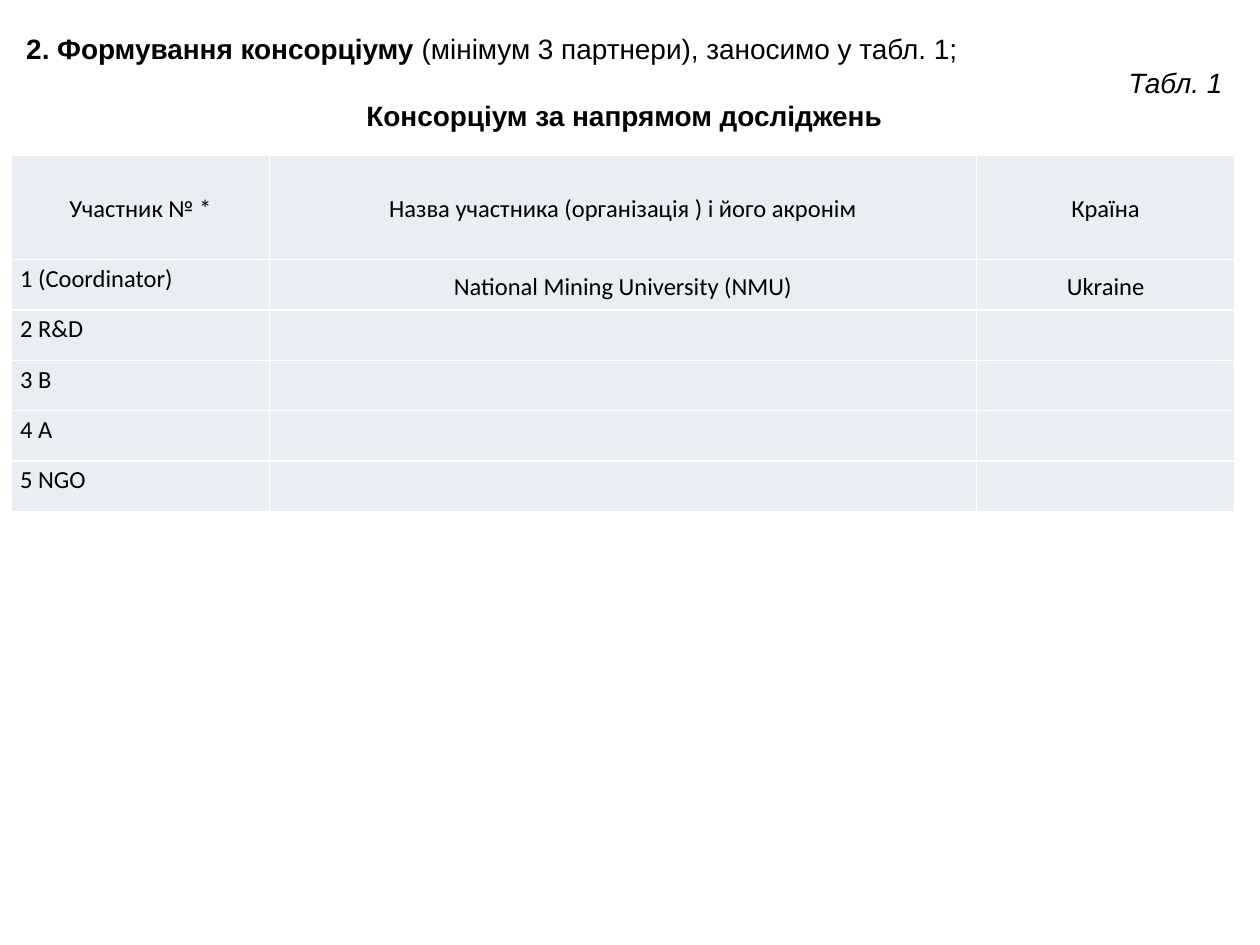
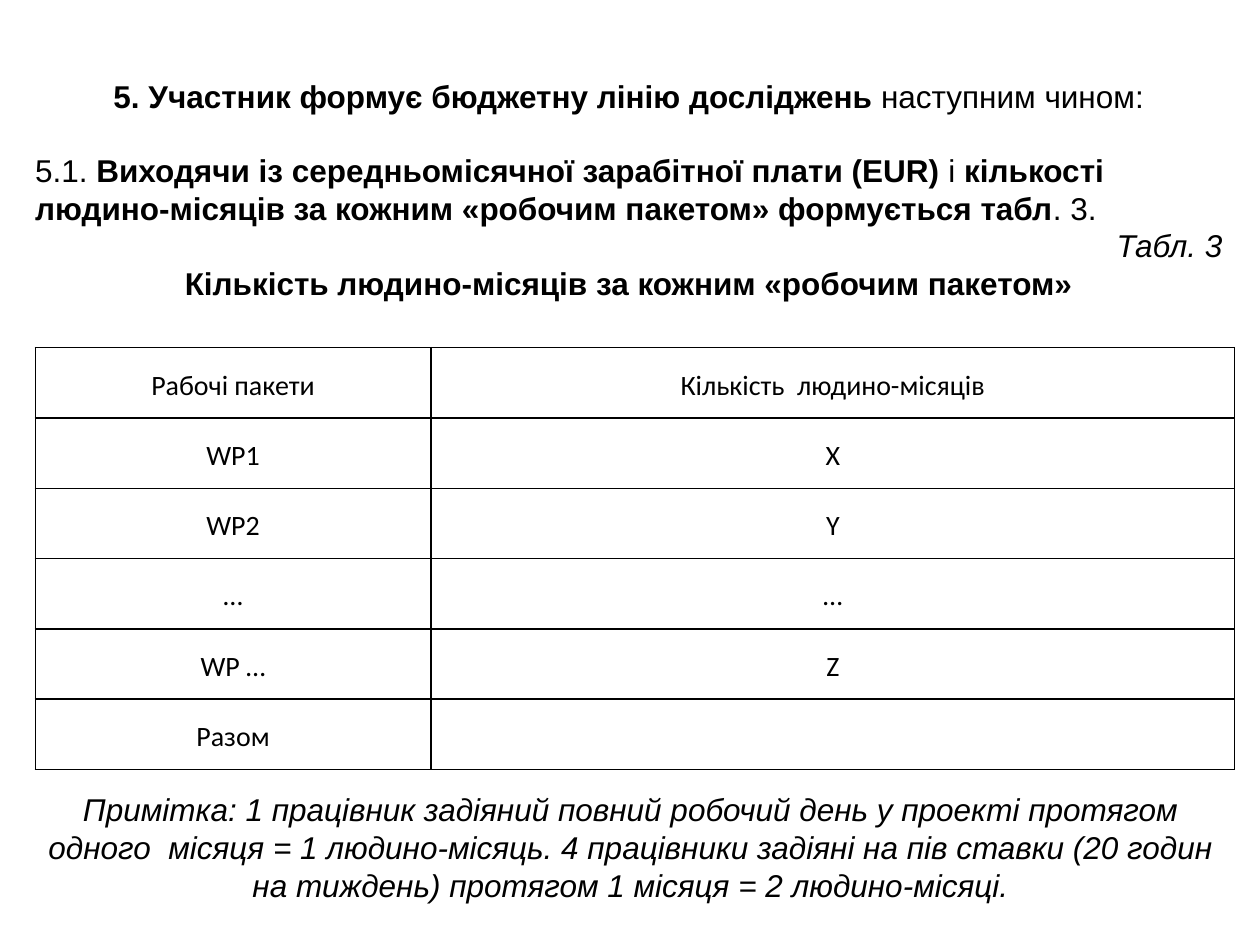
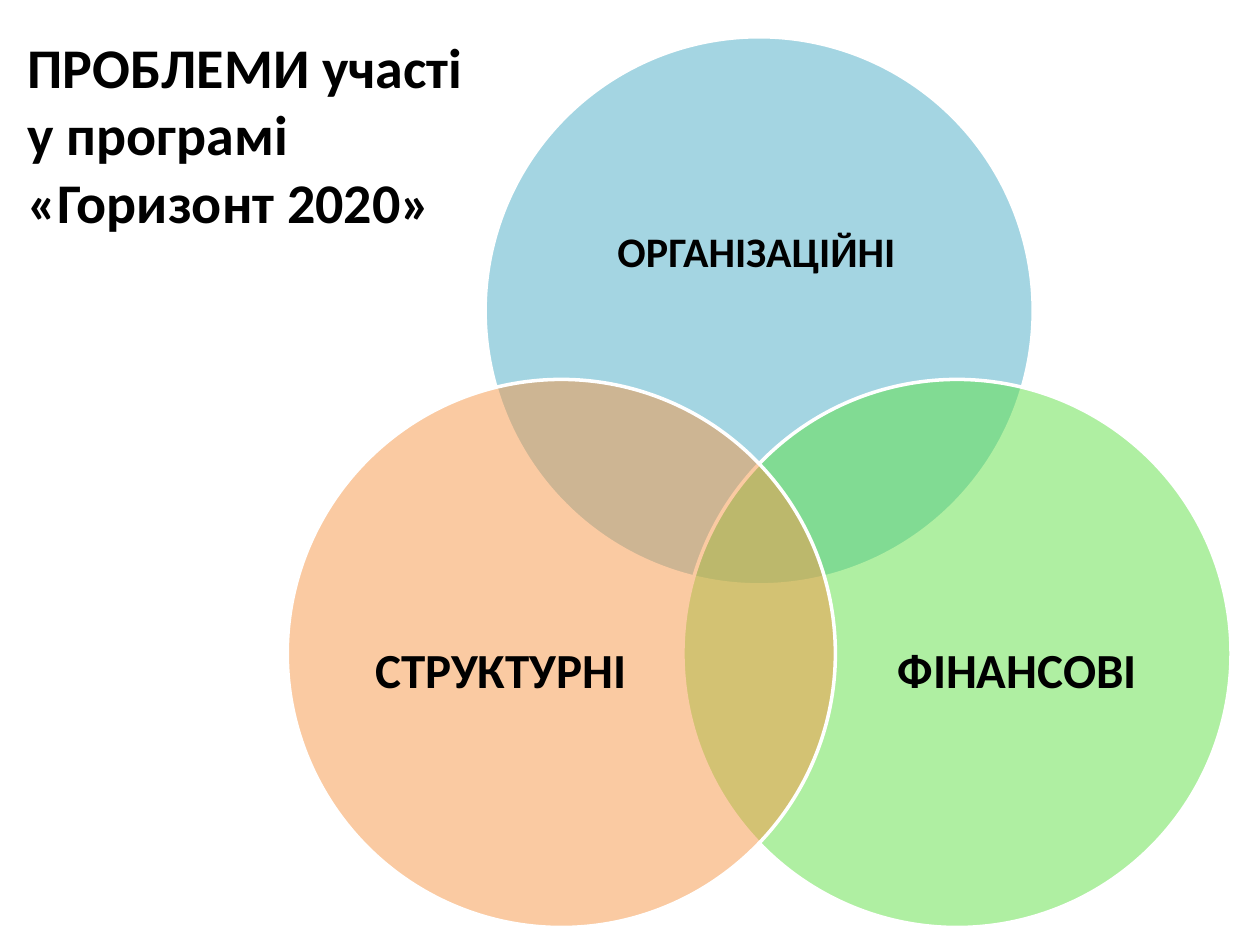
from dataclasses import dataclass
from math import cos, radians, sin, sqrt
from typing import NamedTuple

from lxml import etree
from pptx import Presentation
from pptx.dml.color import RGBColor
from pptx.enum.shapes import MSO_SHAPE
from pptx.enum.text import MSO_ANCHOR, PP_ALIGN
from pptx.oxml.ns import qn
from pptx.util import Inches, Length, Pt

LEFT, CENTER, RIGHT = PP_ALIGN.LEFT, PP_ALIGN.CENTER, PP_ALIGN.RIGHT
JUSTIFY = PP_ALIGN.JUSTIFY
TOP, MIDDLE = MSO_ANCHOR.TOP, MSO_ANCHOR.MIDDLE
ELLIPSE = MSO_SHAPE.OVAL

# The page is a grid of 100 columns by 75 rows of equal square modules.
COLUMNS, ROWS, MODULE = 100, 75, 0.1
BLACK, WHITE, PALE = "000000", "FFFFFF", "E9EDF4"
HEADING_FONT, BODY_FONT = "Arial", "Calibri"


class Area(NamedTuple):
    left: float
    top: float
    width: float
    height: float


class Span(NamedTuple):
    text: str
    bold: bool = False
    italic: bool = False


@dataclass(frozen=True)
class Para:
    spans: tuple[Span, ...]
    align: PP_ALIGN = LEFT
    before: float = 0
    line_spacing: float = 1


@dataclass(frozen=True)
class TextStyle:
    font: str
    size: float
    anchor: MSO_ANCHOR = TOP
    inset_x: float = 1
    inset_y: float = 0.5


@dataclass(frozen=True)
class TableStyle:
    size: float
    border: str
    fill: str | None = None


@dataclass(frozen=True)
class Circle:
    label: str
    size: float
    color: str
    angle: float
    label_share: Area  # shares of the diameter, from the circle's corner


def modules(count: float) -> Length:
    return Inches(round(count * MODULE, 3))


def color(value: str) -> RGBColor:
    return RGBColor.from_string(value)


def bounds(area: Area) -> list[Length]:
    return [modules(length) for length in area]


def set_all(target, values: dict) -> None:
    for name, value in values.items():
        setattr(target, name, value)


def write_para(para, content: Para, font: str, size: float) -> None:
    set_all(para, {"alignment": content.align, "space_before": Pt(content.before),
                   "line_spacing": content.line_spacing})
    for span in content.spans:
        run = para.add_run()
        run.text = span.text
        set_all(run.font, {"name": font, "size": Pt(size),
                           "bold": span.bold, "italic": span.italic})
        run.font.color.rgb = color(BLACK)


def add_text(page, area: Area, paras: list[Para], style: TextStyle) -> None:
    frame = page.shapes.add_textbox(*bounds(area)).text_frame
    set_all(frame, {
        "word_wrap": True, "vertical_anchor": style.anchor,
        "margin_left": modules(style.inset_x), "margin_right": modules(style.inset_x),
        "margin_top": modules(style.inset_y), "margin_bottom": modules(style.inset_y)})
    for index, content in enumerate(paras):
        para = frame.add_paragraph() if index else frame.paragraphs[0]
        write_para(para, content, style.font, style.size)


def add_borders(cell, line_color: str) -> None:
    properties = cell._tc.get_or_add_tcPr()
    for side in ("a:lnL", "a:lnR", "a:lnT", "a:lnB"):
        line = etree.SubElement(properties, qn(side), w=str(Pt(1)))
        fill = etree.SubElement(line, qn("a:solidFill"))
        etree.SubElement(fill, qn("a:srgbClr"), val=line_color)


def add_grid_table(page, area: Area, widths: list[float], heights: list[float],
                   rows: list[list[str]], style: TableStyle,
                   list_column: int | None = None) -> None:
    """Centre every cell except the body of list_column, which starts at the top."""
    table = page.shapes.add_table(len(rows), len(widths), *bounds(area)).table
    set_all(table, {"first_row": False, "horz_banding": False})
    for column, width in zip(table.columns, widths):
        column.width = modules(width)
    for row, height in zip(table.rows, heights):
        row.height = modules(height)
    for row_index, texts in enumerate(rows):
        for column_index, text in enumerate(texts):
            cell = table.cell(row_index, column_index)
            listed = row_index > 0 and column_index == list_column
            set_all(cell, {"margin_left": modules(0.7), "margin_right": modules(0.7),
                           "margin_top": 0, "margin_bottom": 0,
                           "vertical_anchor": TOP if listed else MIDDLE})
            add_borders(cell, style.border)
            if style.fill:
                cell.fill.solid()
                cell.fill.fore_color.rgb = color(style.fill)
            else:
                cell.fill.background()
            if text:
                content = Para((Span(text),), JUSTIFY if listed else CENTER,
                               line_spacing=1.15)
                write_para(cell.text_frame.paragraphs[0], content, BODY_FONT, style.size)


def add_circle(page, circle: Circle, center: tuple[float, float],
               orbit: float, diameter: float) -> None:
    angle = radians(circle.angle)
    left = center[0] + orbit * cos(angle) - diameter / 2
    top = center[1] + orbit * sin(angle) - diameter / 2
    shape = page.shapes.add_shape(ELLIPSE, *bounds(Area(left, top, diameter, diameter)))
    shape.shadow.inherit = False
    shape.fill.solid()
    shape.fill.fore_color.rgb = color(circle.color)
    fill_color = shape._element.spPr.find(qn("a:solidFill")).find(qn("a:srgbClr"))
    etree.SubElement(fill_color, qn("a:alpha"), val="50000")
    shape.line.color.rgb = color(WHITE)
    shape.line.width = Pt(2)

    share = circle.label_share
    label_area = Area(left + share.left * diameter, top + share.top * diameter,
                      share.width * diameter, share.height * diameter)
    label = Para((Span(circle.label, bold=True),), CENTER, line_spacing=0.9)
    add_text(page, label_area, [label], TextStyle(BODY_FONT, circle.size, MIDDLE, 0, 0))


def build_consortium(page) -> None:
    rows = [["Участник № *", "Назва участника (організація ) і його акронім", "Країна"],
            ["1 (Coordinator)", "National Mining University (NMU)", "Ukraine"]]
    rows += [[partner, "", ""] for partner in ("2 R&D", "3 B", "4 A", "5 NGO")]
    add_grid_table(page, Area(0.9, 12.3, 97.1, 28.3), [20.5, 56.1, 20.5],
                   [8.3] + [4] * 5, rows, TableStyle(14, WHITE, PALE), list_column=0)
    add_text(page, Area(1.1, 1.7, 96.9, 11.8), [
        Para((Span("2. Формування консорціуму", bold=True),
              Span(" (мінімум 3 партнери), заносимо у табл. 1;"))),
        Para((Span("Табл. 1", italic=True),), RIGHT),
        Para((Span("Консорціум за напрямом досліджень", bold=True),), CENTER),
    ], TextStyle(HEADING_FONT, 16, inset_y=0.8))


def build_budget(page) -> None:
    rows = [["Рабочі пакети", "Кількість  людино-місяців"], ["WP1", "Х"], ["WP2", "Y"],
            ["…", "…"], ["WP …", "Z"], ["Разом", ""]]
    add_grid_table(page, Area(2.8, 27.6, 95.2, 33.5), [31.4, 63.8],
                   [33.5 / len(rows)] * len(rows), rows, TableStyle(16, BLACK))
    add_text(page, Area(1.8, 5.1, 96.2, 22.2), [
        Para((Span("5. Участник формує бюджетну лінію досліджень ", bold=True),
              Span("наступним чином:")), CENTER),
        Para((Span("5.1. "),
              Span("Виходячи із середньомісячної зарабітної плати (EUR)", bold=True),
              Span(" і "),
              Span("кількості людино-місяців за кожним «робочим пакетом» "
                   "формується табл", bold=True),
              Span(". 3.")), before=20.7),
        Para((Span("Табл. 3", italic=True),), RIGHT),
        Para((Span("Кількість людино-місяців за кожним «робочим пакетом»", bold=True),),
             CENTER),
    ], TextStyle(HEADING_FONT, 18, inset_y=1))
    note = ("Примітка: 1 працівник задіяний повний робочий день у проекті протягом "
            "одного  місяця = 1 людино-місяць. 4 працівники задіяні на пів ставки "
            "(20 годин на тиждень) протягом 1 місяця = 2 людино-місяці.")
    add_text(page, Area(2.1, 62.2, 95.9, 10.1),
             [Para((Span(note, italic=True),), CENTER)], TextStyle(HEADING_FONT, 18))


def build_problems(page) -> None:
    center, center_distance, diameter = (60.25, 42.8), 31.4, 43.5
    circles = [
        Circle("ОРГАНІЗАЦІЙНІ", 24, "4BACC6", -90, Area(0.13, 0.17, 0.73, 0.45)),
        Circle("ФІНАНСОВІ", 28, "60E146", 30, Area(0.31, 0.26, 0.6, 0.55)),
        Circle("СТРУКТУРНІ", 28, "F79646", 150, Area(0.09, 0.26, 0.6, 0.55)),
    ]
    for circle in circles:
        add_circle(page, circle, center, center_distance / sqrt(3), diameter)
    title = Span("ПРОБЛЕМИ участі у програмі «Горизонт 2020»", bold=True)
    add_text(page, Area(1.2, 2.1, 37.8, 17.2), [Para((title,))], TextStyle(BODY_FONT, 32))


def main() -> None:
    deck = Presentation()
    deck.slide_width, deck.slide_height = modules(COLUMNS), modules(ROWS)
    blank = deck.slide_layouts[6]
    for build in (build_consortium, build_budget, build_problems):
        build(deck.slides.add_slide(blank))
    deck.save("out.pptx")


if __name__ == "__main__":
    main()
